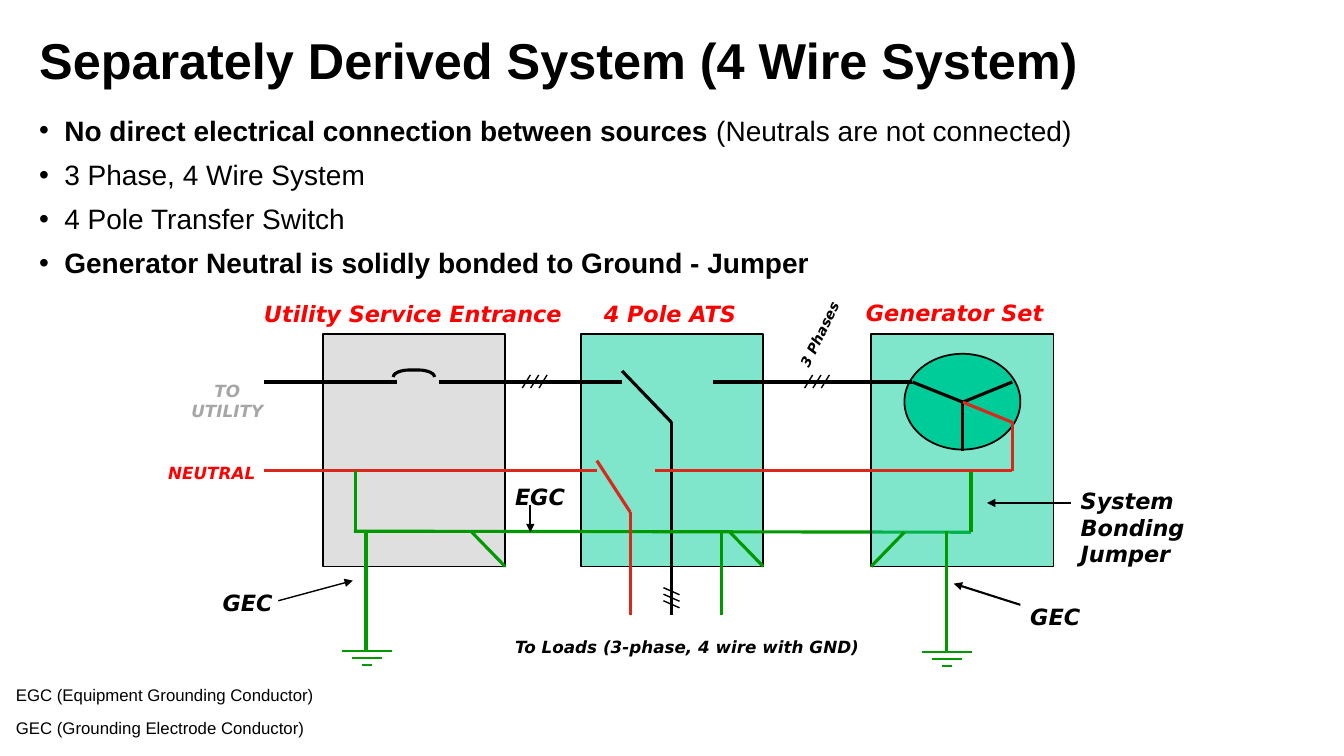
"""Build a slide on a separately derived four-wire system with its wiring diagram."""
from dataclasses import dataclass

from lxml import etree
from pptx import Presentation
from pptx.dml.color import RGBColor
from pptx.enum.shapes import MSO_CONNECTOR, MSO_SHAPE
from pptx.enum.text import MSO_AUTO_SIZE, PP_ALIGN
from pptx.oxml.ns import qn
from pptx.util import Inches, Pt

STRAIGHT = MSO_CONNECTOR.STRAIGHT
RECTANGLE, OVAL, BRACKET = MSO_SHAPE.RECTANGLE, MSO_SHAPE.OVAL, MSO_SHAPE.RIGHT_BRACKET
FIT, CENTER = MSO_AUTO_SIZE.SHAPE_TO_FIT_TEXT, PP_ALIGN.CENTER
BLACK = RGBColor(0x00, 0x00, 0x00)
RED = RGBColor(0xFF, 0x00, 0x00)
NEUTRAL_RED = RGBColor(0xDA, 0x28, 0x1C)
GROUND_GREEN = RGBColor(0x00, 0x99, 0x00)
TEAL = RGBColor(0x00, 0xCC, 0x99)
SILVER = RGBColor(0xC0, 0xC0, 0xC0)
GREY = RGBColor(0xA6, 0xA6, 0xA6)
BODY_FONT, LABEL_FONT = "Arial", "DejaVu Sans"
GRID_COLS, GRID_ROWS, CELL = 133.3, 75, 0.1
PANEL_ROW, PANEL_COLS, PANEL_ROWS = 33.1, 18.1, 23.1
PHASE_ROW, NEUTRAL_ROW, EGC_ROW, LOAD_ROW = 37.9, 46.7, 52.8, 61


@dataclass(frozen=True)
class Wire:
    """A straight line between two grid points."""
    col: float
    row: float
    end_col: float
    end_row: float
    color: RGBColor = BLACK
    width: float = 2.25
    arrow: bool = False


@dataclass(frozen=True)
class Label:
    """A bold italic caption in a grid frame."""
    text: str
    col: float
    row: float
    cols: float
    rows: float
    size: int = 16
    color: RGBColor = BLACK
    wrap: bool = False
    centered: bool = False
    angle: float = 0


def grid(cells: float) -> int:
    """Convert grid cells to a length."""
    return Inches(round(cells * CELL, 3))


def draw_wire(s, wire: Wire) -> None:
    """Draw one wire, with an arrowhead if it points at something."""
    c = s.shapes.add_connector(STRAIGHT, grid(wire.col), grid(wire.row),
                               grid(wire.end_col), grid(wire.end_row))
    c.line.color.rgb = wire.color
    c.line.width = Pt(wire.width)
    if wire.arrow:
        etree.SubElement(c.line._get_or_add_ln(), qn("a:tailEnd"), type="triangle")
    etree.SubElement(c._element.spPr, qn("a:effectLst"))


def draw_shape(s, kind, col: float, row: float, cols: float, rows: float,
               fill: RGBColor | None = None, alpha: int = 100, width: float = 1.25):
    """Draw a black-edged shape with an optional translucent fill."""
    sp = s.shapes.add_shape(kind, grid(col), grid(row), grid(cols), grid(rows))
    sp.shadow.inherit = False
    sp.line.color.rgb = BLACK
    sp.line.width = Pt(width)
    if fill is None:
        sp.fill.background()
        return sp
    sp.fill.solid()
    sp.fill.fore_color.rgb = fill
    if alpha < 100:
        color = sp._element.spPr.find(qn("a:solidFill"))[0]
        etree.SubElement(color, qn("a:alpha"), val=str(alpha * 1000))
    return sp


def draw_panel(s, col: float, fill: RGBColor) -> None:
    """Draw one equipment enclosure."""
    draw_shape(s, RECTANGLE, col, PANEL_ROW, PANEL_COLS, PANEL_ROWS, fill, 50)


def add_text(s, text: str, col: float, row: float, cols: float, rows: float,
             size: int, font: str = BODY_FONT, color: RGBColor = BLACK, bold: bool = False):
    """Add a text box and format every run in it."""
    sp = s.shapes.add_textbox(grid(col), grid(row), grid(cols), grid(rows))
    tf = sp.text_frame
    tf.word_wrap = True
    tf.text = text
    for p in tf.paragraphs:
        for r in p.runs:
            r.font.name, r.font.size, r.font.bold = font, Pt(size), bold
            r.font.color.rgb = color
    return sp


def draw_label(s, label: Label) -> None:
    """Draw one diagram caption."""
    sp = add_text(s, label.text, label.col, label.row, label.cols, label.rows,
                  label.size, LABEL_FONT, label.color, True)
    sp.rotation = label.angle
    tf = sp.text_frame
    tf.word_wrap = label.wrap
    tf.auto_size = FIT
    for p in tf.paragraphs:
        if label.centered:
            p.alignment = CENTER
        for r in p.runs:
            r.font.italic = True


def space_lines(sp) -> None:
    """Set the body spacing of all paragraphs."""
    for p in sp.text_frame.paragraphs:
        p.line_spacing, p.space_before = 0.9, Pt(10)


def add_bullets(s, points: list[tuple[str, bool]], aside: str) -> None:
    """Add the bullet list, with a plain aside after the first point."""
    sp = add_text(s, "\n".join(text for text, _ in points), 2.9, 11.1, 108.4, 18, 20)
    space_lines(sp)
    for p, (_, bold) in zip(sp.text_frame.paragraphs, points):
        p.runs[0].font.bold = bold
        pPr = p._p.get_or_add_pPr()
        pPr.set("marL", str(Inches(0.25)))
        pPr.set("indent", str(-Inches(0.25)))
        etree.SubElement(pPr, qn("a:buFont"), typeface=BODY_FONT)
        etree.SubElement(pPr, qn("a:buChar"), char="•")
    r = sp.text_frame.paragraphs[0].add_run()
    r.text = aside
    r.font.name, r.font.size, r.font.bold = BODY_FONT, Pt(20), False
    r.font.color.rgb = BLACK


def phase_marks(col: float) -> list[Wire]:
    """Three slashes across a horizontal phase line."""
    return [Wire(x + 0.8, 37.2, x, 38.5, width=1) for x in (col, col + 0.83, col + 1.66)]


def earth_symbol(col: float, row: float) -> list[Wire]:
    """Three shrinking bars of an earth electrode."""
    return [Wire(col - half, row + 0.68 * i, col + half, row + 0.68 * i, GROUND_GREEN, 1.5)
            for i, half in enumerate((2.5, 1.5, 0.5))]


SWITCH_WIRES = [
    Wire(43.5, PHASE_ROW, 61.7, PHASE_ROW),
    Wire(26.2, NEUTRAL_ROW, 59.2, NEUTRAL_ROW, NEUTRAL_RED),
    Wire(61.7, 36.8, 66.6, 41.9),
    Wire(66.6, 41.9, 66.6, LOAD_ROW),
    Wire(36.3, EGC_ROW, 36.3, 64.6, GROUND_GREEN),
    *earth_symbol(36.4, 64.6),
    Wire(35.3, NEUTRAL_ROW, 35.3, EGC_ROW, GROUND_GREEN),
    Wire(35.1, 52.7, 96.3, EGC_ROW, GROUND_GREEN),
    Wire(62.5, 50.8, 62.5, LOAD_ROW, NEUTRAL_RED),
    Wire(71.6, EGC_ROW, 71.6, LOAD_ROW, GROUND_GREEN),
    Wire(62.5, 50.8, 59.2, 45.7, NEUTRAL_RED),
    *phase_marks(51.8),
    *[Wire(67.4, 59 + 0.65 * i, 65.8, 58.3 + 0.65 * i, width=1) for i in range(3)],
    Wire(72.4, EGC_ROW, 75.7, 56.2, GROUND_GREEN),
    Wire(46.8, EGC_ROW, 50.1, 56.2, GROUND_GREEN),
    Wire(27.6, 59.6, 35, 57.6, width=1, arrow=True)]
GENERATOR_WIRES = [
    Wire(90.5, PHASE_ROW, 95.5, 39.9),
    Wire(95.5, 39.9, 100.4, PHASE_ROW),
    Wire(95.5, 39.9, 95.5, 44.7),
    Wire(95.5, 39.9, 100.4, 41.9, NEUTRAL_RED),
    Wire(96.3, NEUTRAL_ROW, 96.3, EGC_ROW, GROUND_GREEN),
    *phase_marks(79.8),
    Wire(89.7, EGC_ROW, 86.4, 56.2, GROUND_GREEN),
    *earth_symbol(93.9, 64.7),
    Wire(101.2, 60, 94.6, 57.9, width=1.5, arrow=True),
    Wire(100.4, 41.9, 100.4, NEUTRAL_ROW, NEUTRAL_RED),
    Wire(52.6, 50.1, 52.6, EGC_ROW, width=1.5, arrow=True),
    Wire(65, NEUTRAL_ROW, 100.4, NEUTRAL_ROW, NEUTRAL_RED),
    Wire(70.7, PHASE_ROW, 90.5, PHASE_ROW),
    Wire(93.9, 52.7, 93.9, 64.6, GROUND_GREEN),
    Wire(106.2, 49.9, 97.9, 49.9, width=1.5, arrow=True)]
LABELS = [
    Label("Utility Service Entrance", 25.2, 29.3, 32.4, 3.7, color=RED),
    Label("4 Pole ATS", 58.9, 29.3, 15.5, 3.7, color=RED),
    Label("Generator Set", 84.9, 29.2, 19.6, 3.7, color=RED),
    Label("To Loads (3-phase, 4 wire with GND)", 50.1, 62.7, 37.3, 3, 12, wrap=True),
    Label("GEC", 21.1, 58, 7, 3.7),
    Label("GEC", 101.2, 59.3, 7, 3.7),
    Label("EGC", 50.1, 47.4, 7, 3.7),
    Label("System Bonding Jumper", 106.2, 47.8, 15.1, 9.1, wrap=True),
    Label("TO\nUTILITY", 17.7, 37.3, 9.7, 5, 12, GREY, centered=True),
    Label("NEUTRAL", 15.6, 45.4, 10.8, 3, 12, RED, centered=True),
    Label("3 Phases", 76.8, 31.8, 9, 2.7, 10, angle=296.2)]
POINTS = [("No direct electrical connection between sources ", True),
          ("3 Phase, 4 Wire System", False), ("4 Pole Transfer Switch", False),
          ("Generator Neutral is solidly bonded to Ground - Jumper", True)]


def main() -> None:
    """Build and save the slide."""
    prs = Presentation()
    prs.slide_width, prs.slide_height = grid(GRID_COLS), grid(GRID_ROWS)
    s = prs.slides.add_slide(prs.slide_layouts[6])
    title = add_text(s, "Separately Derived System (4 Wire System)", 2.9, 1.7, 117.5, 10.3, 36, bold=True)
    title.text_frame.paragraphs[0].line_spacing = Pt(48)
    add_bullets(s, POINTS, "(Neutrals are not connected)")
    draw_panel(s, 32, SILVER)
    draw_wire(s, Wire(26.2, PHASE_ROW, 39.4, PHASE_ROW))
    draw_panel(s, 57.6, TEAL)
    breaker = draw_shape(s, BRACKET, 40.7, 35, 0.7, 4.1, width=2.25)
    breaker.adjustments[0], breaker.rotation = 2.34, 270
    for wire in SWITCH_WIRES:
        draw_wire(s, wire)
    draw_panel(s, 86.4, TEAL)
    draw_shape(s, OVAL, 89.7, 35.1, 11.5, 9.5, TEAL)
    for wire in GENERATOR_WIRES:
        draw_wire(s, wire)
    for label in LABELS:
        draw_label(s, label)
    space_lines(add_text(s, "EGC (Equipment Grounding Conductor)\nGEC (Grounding Electrode Conductor)",
                         0.6, 67.7, 66, 6, 12))
    prs.save("out.pptx")


if __name__ == "__main__":
    main()
